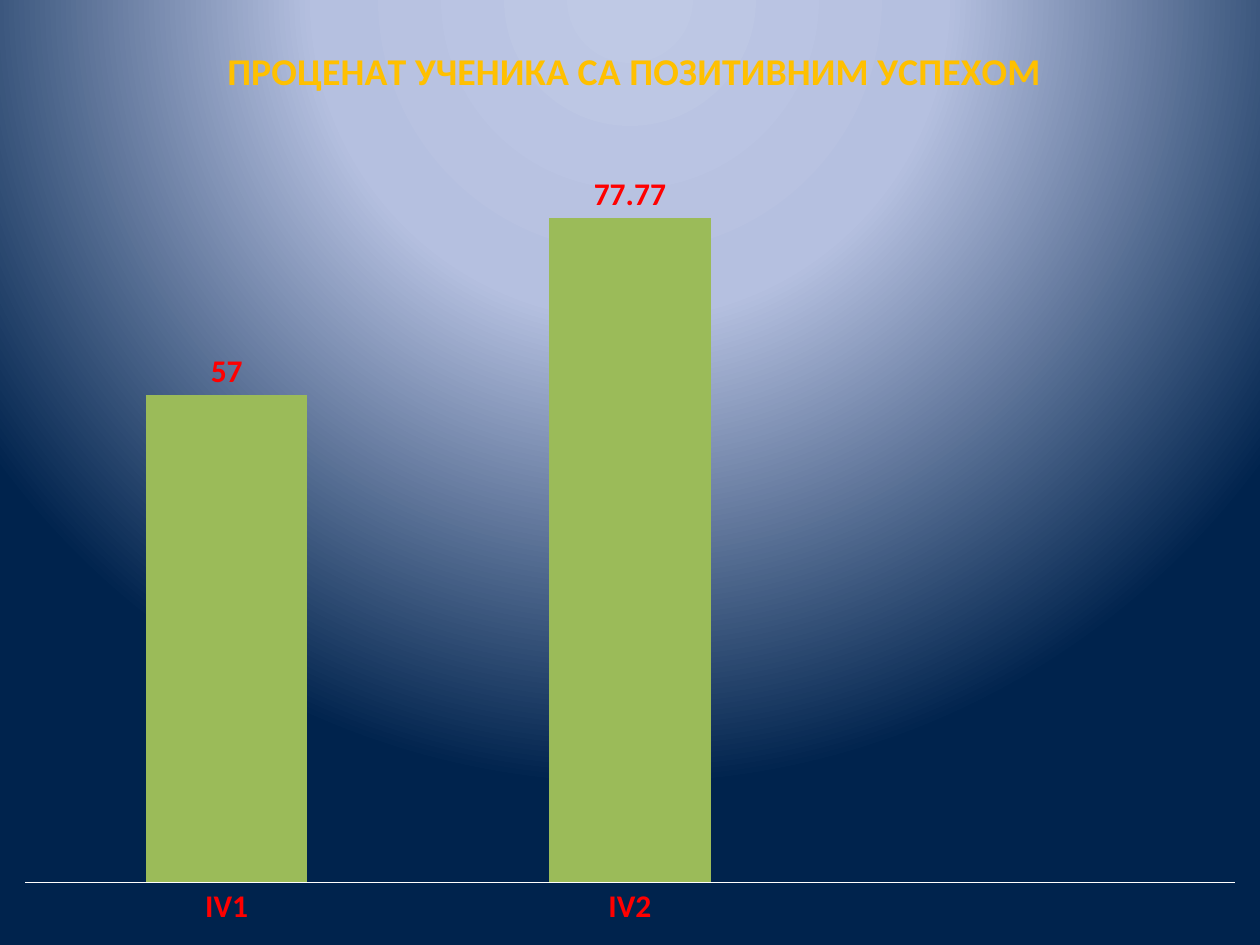
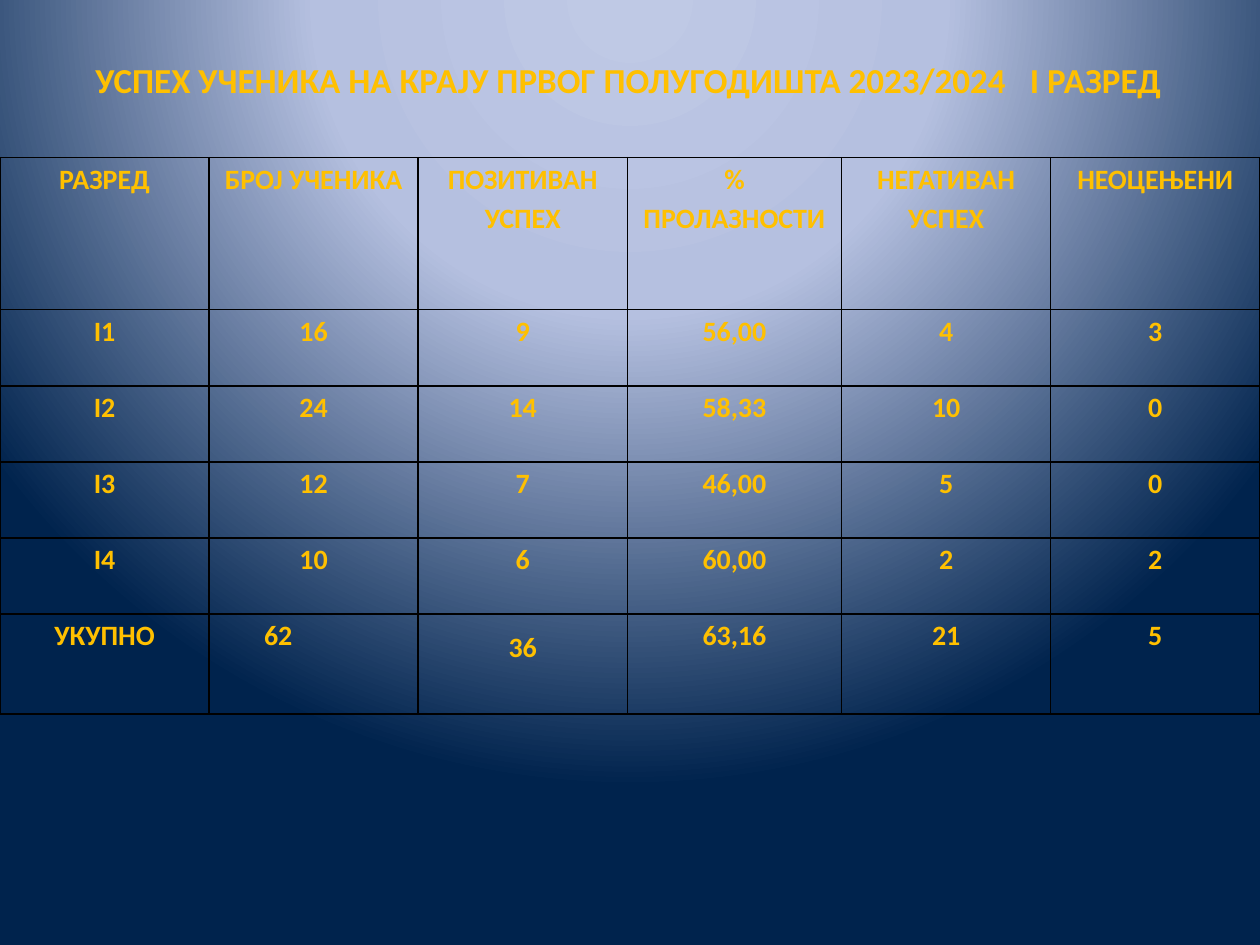
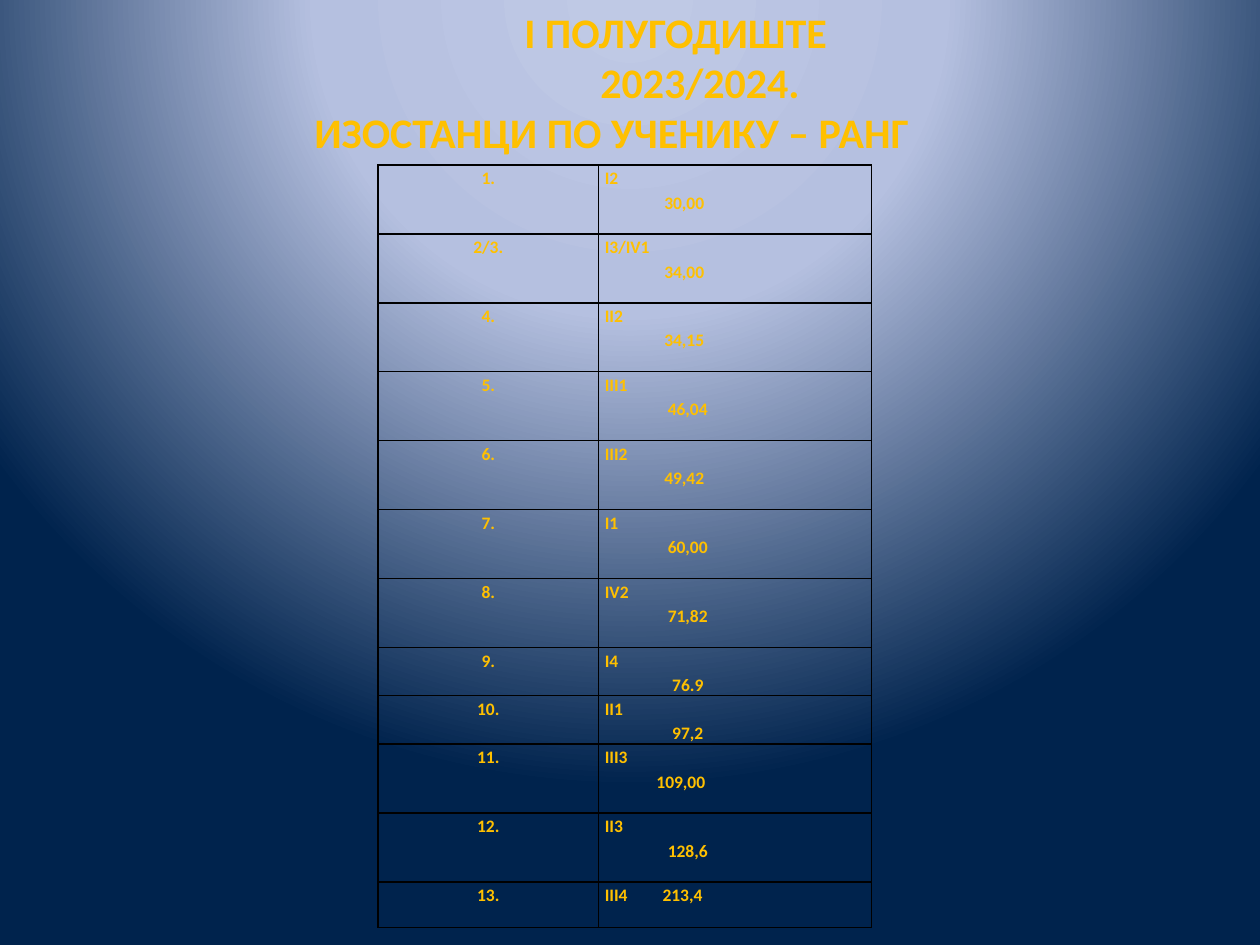
from pptx import Presentation
from pptx.chart.data import CategoryChartData
from pptx.dml.color import RGBColor
from pptx.enum import chart as charts, text
from pptx.oxml import parse_xml
from pptx.oxml.ns import nsdecls, qn
from pptx.util import Pt

FONT = "Calibri"
GOLD = RGBColor(0xFF, 0xC0, 0x00)
RED = RGBColor(0xFF, 0x00, 0x00)
GREEN = RGBColor(0x9B, 0xBB, 0x59)
WHITE = RGBColor(0xFF, 0xFF, 0xFF)
BLACK = RGBColor(0x00, 0x00, 0x00)
BACKDROP = [
    (0, RGBColor(0xBF, 0xC9, 0xE5)),
    (40, RGBColor(0xB5, 0xC0, 0xE0)),
    (100, RGBColor(0x00, 0x23, 0x4D)),
]
SLIDE_W, SLIDE_H = 720, 540
CENTER = text.PP_ALIGN.CENTER

SUCCESS = [
    ["РАЗРЕД", "БРОЈ УЧЕНИКА", "ПОЗИТИВАН УСПЕХ", "% ПРОЛАЗНОСТИ",
     "НЕГАТИВАН УСПЕХ", "НЕОЦЕЊЕНИ"],
    ["I1", "16", "9", "56,00", "4", "3"],
    ["I2", "24", "14", "58,33", "10", "0"],
    ["I3", "12", "7", "46,00", "5", "0"],
    ["I4", "10", "6", "60,00", "2", "2"],
    ["УКУПНО", "\t62", "36", "63,16", "21", "5"],
]

ABSENCES = [
    ("1.", "I2", "30,00", 34, 39.4),
    ("2/3.", "I3/IV1", "34,00", 34, 39.4),
    ("4.", "II2", "34,15", 34, 39.4),
    ("5.", "III1", "46,04", 36, 39.4),
    ("6.", "III2", "49,42", 34, 39.4),
    ("7.", "I1", "60,00", 36, 39.4),
    ("8.", "IV2", "71,82", 36, 39.4),
    ("9.", "I4", "76.9", 38.5, 26),
    ("10.", "II1", "97,2", 38.5, 26),
    ("11.", "III3", "109,00", 29.5, 39.4),
    ("12.", "II3", "128,6", 36, 39.4),
    ("13.", "III4\t213,4", None, 33, 26),
]


def set_backdrop(master):
    stops = "".join(
        f'<a:gs pos="{pos * 1000}"><a:srgbClr val="{color}"/></a:gs>'
        for pos, color in BACKDROP)
    backdrop = parse_xml(
        f'<p:bg {nsdecls("p", "a")}><p:bgPr><a:gradFill rotWithShape="1">'
        f'<a:gsLst>{stops}</a:gsLst><a:path path="circle">'
        '<a:fillToRect l="50000" t="-80000" r="50000" b="180000"/></a:path>'
        '</a:gradFill><a:effectLst/></p:bgPr></p:bg>')
    content = master.element.find(qn("p:cSld"))
    for old in content.findall(qn("p:bg")):
        content.remove(old)
    content.insert(0, backdrop)


def style_font(font, size, color):
    font.name = FONT
    font.size = Pt(size)
    font.bold = True
    font.color.rgb = color


def write(paragraph, words, size, align=text.PP_ALIGN.LEFT, spacing=None,
          indent=0, tab=None, tab_align="l"):
    paragraph.text = words
    paragraph.alignment = align
    if spacing:
        paragraph.line_spacing = spacing
    for run in paragraph.runs:
        style_font(run.font, size, GOLD)
    properties = paragraph._p.get_or_add_pPr()
    if indent:
        properties.set("marL", str(Pt(indent)))
        properties.set("indent", "0")
    if tab:
        properties.append(parse_xml(
            f'<a:tabLst {nsdecls("a")}>'
            f'<a:tab pos="{Pt(tab)}" algn="{tab_align}"/></a:tabLst>'))


def add_heading(slide, left, top, width, height):
    frame = slide.shapes.add_textbox(
        Pt(left), Pt(top), Pt(width), Pt(height)).text_frame
    frame.word_wrap = True
    frame.vertical_anchor = text.MSO_ANCHOR.TOP
    return frame


def prepare_cell(cell, inset):
    cell.margin_left = cell.margin_right = Pt(inset)
    cell.margin_top = cell.margin_bottom = Pt(0)
    properties = cell._tc.get_or_add_tcPr()
    for side in "LRTB":
        properties.append(parse_xml(
            f'<a:ln{side} {nsdecls("a")} w="{Pt(1)}"><a:solidFill>'
            f'<a:srgbClr val="{BLACK}"/></a:solidFill></a:ln{side}>'))
    cell.fill.background()


def add_grid(slide, left, top, widths, heights, inset):
    grid = slide.shapes.add_table(
        len(heights), len(widths), Pt(left), Pt(top),
        Pt(sum(widths)), Pt(sum(heights))).table
    grid.first_row = grid.horz_banding = False
    for column, width in zip(grid.columns, widths):
        column.width = Pt(width)
    for row, height in zip(grid.rows, heights):
        row.height = Pt(height)
    for cell in grid.iter_cells():
        prepare_cell(cell, inset)
    return grid


def place(part, index, **fractions):
    for old in part.findall(qn("c:layout")):
        part.remove(old)
    values = "".join(f'<c:{key} val="{value}"/>'
                     for key, value in fractions.items())
    target = '<c:layoutTarget val="inner"/>' if "w" in fractions else ""
    part.insert(index, parse_xml(
        f'<c:layout {nsdecls("c")}><c:manualLayout>{target}'
        f'<c:xMode val="edge"/><c:yMode val="edge"/>{values}'
        '</c:manualLayout></c:layout>'))


def add_pass_rate_chart(slide):
    rates = CategoryChartData()
    rates.categories = ["IV1", "IV2", ""]
    rates.add_series("Series 1", [57, 77.77, None])
    chart = slide.shapes.add_chart(
        charts.XL_CHART_TYPE.COLUMN_CLUSTERED, Pt(0), Pt(0),
        Pt(SLIDE_W), Pt(SLIDE_H), rates).chart
    chart.font.name = FONT
    chart.font.size = Pt(18)
    chart.font.color.rgb = WHITE
    chart.has_legend = False

    chart.has_title = True
    heading = chart.chart_title
    write(heading.text_frame.paragraphs[0],
          "ПРОЦЕНАТ УЧЕНИКА СА ПОЗИТИВНИМ УСПЕХОМ", 21.6, CENTER)
    place(heading._element, 1, x=0.175, y=0.04)

    grades = chart.category_axis
    grades.major_tick_mark = charts.XL_TICK_MARK.NONE
    grades.format.line.color.rgb = WHITE
    grades.format.line.width = Pt(1)
    style_font(grades.tick_labels.font, 18, RED)

    percent = chart.value_axis
    percent.minimum_scale, percent.maximum_scale = 0, 90
    percent.has_major_gridlines = False
    percent.visible = False

    plot = chart.plots[0]
    plot.gap_width = 150
    plot.vary_by_categories = False
    bars = plot.series[0]
    bars.format.fill.solid()
    bars.format.fill.fore_color.rgb = GREEN
    labels = bars.data_labels
    labels.show_value = True
    labels.position = charts.XL_LABEL_POSITION.OUTSIDE_END
    style_font(labels.font, 18, RED)
    place(chart._chartSpace.chart.plotArea, 0, x=0.02, y=0.12, w=0.96, h=0.814)


def add_success_slide(slide):
    grid = add_grid(slide, 0, 90, [119.5] * 3 + [122.5] + [119.5] * 2,
                    [87] + [43.5] * 4 + [57], 5)
    for r, row in enumerate(SUCCESS):
        for c, words in enumerate(row):
            paragraph = grid.cell(r, c).text_frame.paragraphs[0]
            if words.startswith("\t"):
                write(paragraph, words, 16, spacing=1.15, tab=34.5,
                      tab_align="ctr")
            else:
                write(paragraph, words, 16, CENTER,
                      1.5 if words == "36" else 1.15)

    heading = add_heading(slide, 12, 30, 708, 55)
    heading.margin_left = Pt(42.5)
    heading.margin_right = Pt(0)
    write(heading.paragraphs[0],
          "УСПЕХ УЧЕНИКА НА КРАЈУ ПРВОГ ПОЛУГОДИШТА 2023/2024\tI РАЗРЕД",
          20, tab=534)


def add_absence_slide(slide):
    grid = add_grid(slide, 216, 94.3, [126, 156],
                    [row[-1] for row in ABSENCES], 3.6)
    for r, (rank, grade, absences, offset, _) in enumerate(ABSENCES):
        write(grid.cell(r, 0).text_frame.paragraphs[0], rank, 10, CENTER, 1.15)
        frame = grid.cell(r, 1).text_frame
        write(frame.paragraphs[0], grade, 10, spacing=1.15,
              tab=None if absences else offset)
        if absences:
            write(frame.add_paragraph(), absences, 10, spacing=1.15,
                  indent=offset)

    heading = add_heading(slide, 0, 0, 536, 124)
    lines = [("I ПОЛУГОДИШТЕ", 292.5), ("2023/2024.", 336),
             ("ИЗОСТАНЦИ ПО УЧЕНИКУ – РАНГ", 172.5)]
    for n, (words, indent) in enumerate(lines):
        paragraph = heading.add_paragraph() if n else heading.paragraphs[0]
        write(paragraph, words, 24, indent=indent)


def main():
    deck = Presentation()
    deck.slide_width, deck.slide_height = Pt(SLIDE_W), Pt(SLIDE_H)
    set_backdrop(deck.slide_master)
    blank = deck.slide_layouts[6]
    for fill_slide in (add_pass_rate_chart, add_success_slide,
                       add_absence_slide):
        fill_slide(deck.slides.add_slide(blank))
    deck.save("out.pptx")


if __name__ == "__main__":
    main()
